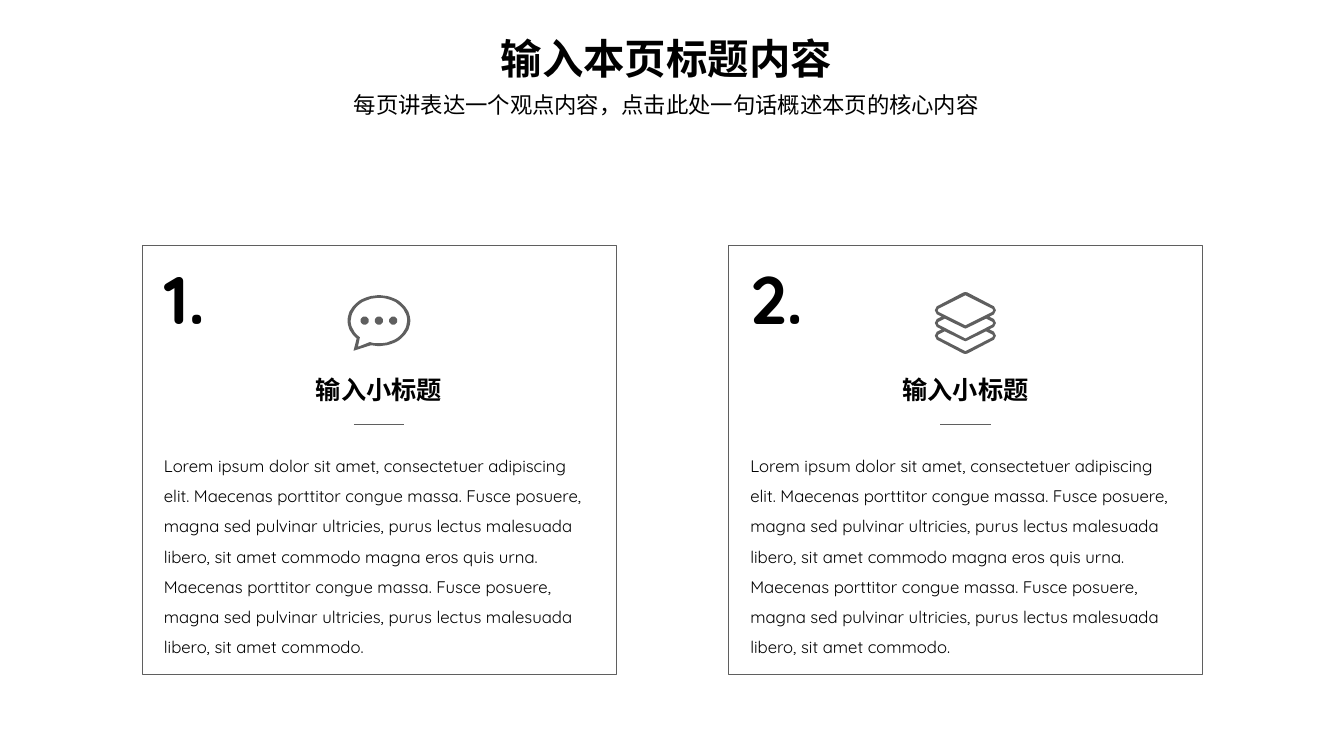
from dataclasses import dataclass
from math import cos, radians, sin

from lxml import etree
from pptx import Presentation
from pptx.dml.color import RGBColor
from pptx.enum import shapes, text
from pptx.oxml import ns
from pptx.util import Cm, Pt


@dataclass(frozen=True)
class Theme:
    font: str = "Quicksand"
    ink: RGBColor = RGBColor(0, 0, 0)
    grey: RGBColor = RGBColor(0x5F, 0x5F, 0x5F)
    title: float = 29.6
    subtitle: float = 16
    number: float = 48
    heading: float = 18
    body: float = 12


THEME = Theme()
CARD_LEFT, CARD_TOP, CARD_W, CARD_H = 3.58, 6.17, 11.94, 10.82
CARD_PITCH = 14.78
BODY = (
    "Lorem ipsum dolor sit amet, consectetuer adipiscing elit. "
    "Maecenas porttitor congue massa. Fusce posuere, magna sed pulvinar "
    "ultricies, purus lectus malesuada libero, sit amet commodo magna eros "
    "quis urna. Maecenas porttitor congue massa. Fusce posuere, magna sed "
    "pulvinar ultricies, purus lectus malesuada libero, sit amet commodo."
)


def add_text(s, content, left, top, width, height, *, size, bold=False,
             align=None, spacing=None, before=None, anchor=None,
             insets=None, wrap=True, grow=False):
    tf = s.shapes.add_textbox(Cm(left), Cm(top), Cm(width), Cm(height)).text_frame
    tf.word_wrap = wrap
    if grow:
        tf.auto_size = text.MSO_AUTO_SIZE.SHAPE_TO_FIT_TEXT
    if anchor is not None:
        tf.vertical_anchor = anchor
    if insets:
        tf.margin_left = tf.margin_right = Cm(insets[0])
        tf.margin_top = tf.margin_bottom = Cm(insets[1])
    p = tf.paragraphs[0]
    p.alignment, p.line_spacing, p.space_before = align, spacing, before
    r = p.add_run()
    r.text = content
    r.font.name, r.font.size, r.font.bold = THEME.font, Pt(size), bold
    r.font.color.rgb = THEME.ink


def add_frame(s, left):
    sp = s.shapes.add_shape(shapes.MSO_SHAPE.RECTANGLE, Cm(left), Cm(CARD_TOP),
                            Cm(CARD_W), Cm(CARD_H))
    sp.shadow.inherit = False
    sp.fill.background()
    sp.line.color.rgb = THEME.grey
    sp.line.width = Pt(0.25)


def add_divider(s, center, y, length=1.27):
    line = s.shapes.add_connector(shapes.MSO_CONNECTOR.STRAIGHT,
                                  Cm(center - length / 2), Cm(y),
                                  Cm(center + length / 2), Cm(y))
    line.line.color.rgb = THEME.grey
    line.line.width = Pt(0.5)
    etree.SubElement(line._element.spPr, ns.qn("a:effectLst"))


def arc(rx, ry, start=0, end=360, cx=0, step=6):
    """Points along an ellipse, angles in degrees, lengths in cm."""
    return [(cx + rx * cos(radians(a)), ry * sin(radians(a)))
            for a in range(start, end, step)]


def mirrored(half):
    """Close a right-hand outline, listed top to bottom, with its left half."""
    return half + [(-x, y) for x, y in reversed(half)]


def add_icon(s, contours, cx, cy):
    """Fill contours given in cm around the icon's centre; inner ones are holes."""
    units = [[(round(x * 100), round(y * 100)) for x, y in c] for c in contours]
    first, *others = units
    builder = s.shapes.build_freeform(*first[0], scale=Cm(0.01))
    builder.add_line_segments(first[1:], close=True)
    for contour in others:
        builder.move_to(*contour[0])
        builder.add_line_segments(contour[1:], close=True)
    sp = builder.convert_to_shape(Cm(cx), Cm(cy))
    sp.shadow.inherit = False
    sp.fill.solid()
    sp.fill.fore_color.rgb = THEME.grey
    sp.line.fill.background()


def bubble_contours():
    outer = arc(0.79, 0.64, 135, 468) + [(-0.64, 0.76)]
    inner = arc(0.71, 0.57, 133, 472) + [(-0.53, 0.66)]
    dots = [arc(0.1, 0.1, cx=x, step=15) for x in (-0.36, 0, 0.36)]
    return [outer, inner, *dots]


def layers_contours():
    pitch = 0.32
    edge = [(0, -0.78), (0.05, -0.77)]
    for y in (-pitch, 0, pitch):
        edge += [(0.72, y - 0.1), (0.77, y), (0.72, y + 0.1)]
        if y < pitch:
            edge.append((0.6, y + pitch / 2))
    edge += [(0.05, 0.77), (0, 0.78)]
    top = [(0, -0.7), (0.68, -0.36), (0.7, -0.32), (0.68, -0.28), (0, 0.06)]
    band = [(0, 0.14), (0.05, 0.12), (0.52, -0.11), (0.68, -0.03),
            (0.7, 0), (0.68, 0.04), (0, 0.39)]
    lower = [(x, y + pitch) for x, y in band]
    return [mirrored(half) for half in (edge, top, band, lower)]


def add_card(s, left, number, contours, icon_y):
    center = left + CARD_W / 2
    add_frame(s, left)
    add_icon(s, contours, center, icon_y)
    add_text(s, number, left + 0.3, 6.35, 1.96, 2.31, size=THEME.number,
             bold=True, wrap=False, grow=True)
    add_text(s, "输入小标题", center - 3.24, 9.4, 6.48, 0.81,
             size=THEME.heading, bold=True, align=text.PP_ALIGN.CENTER,
             anchor=text.MSO_ANCHOR.MIDDLE, insets=(0.13, 0.05))
    add_divider(s, center, 10.69)
    add_text(s, BODY, left + 0.3, 11.1, 11.33, 5.56, size=THEME.body,
             spacing=1.5, grow=True)


def main():
    prs = Presentation()
    prs.slide_width, prs.slide_height = Cm(33.87), Cm(19.05)
    s = prs.slides.add_slide(prs.slide_layouts[6])
    add_text(s, "输入本页标题内容", 2.13, 0.48, 29.34, 1.65, size=THEME.title,
             bold=True, align=text.PP_ALIGN.CENTER, spacing=Pt(42))
    add_text(s, "每页讲表达一个观点内容，点击此处一句话概述本页的核心内容",
             2.13, 2.24, 29.34, 0.99, size=THEME.subtitle,
             align=text.PP_ALIGN.CENTER, spacing=0.9, before=Pt(10))
    cards = [("1.", bubble_contours(), 8.08), ("2.", layers_contours(), 8.14)]
    for i, card in enumerate(cards):
        add_card(s, CARD_LEFT + i * CARD_PITCH, *card)
    prs.save("out.pptx")


if __name__ == "__main__":
    main()
